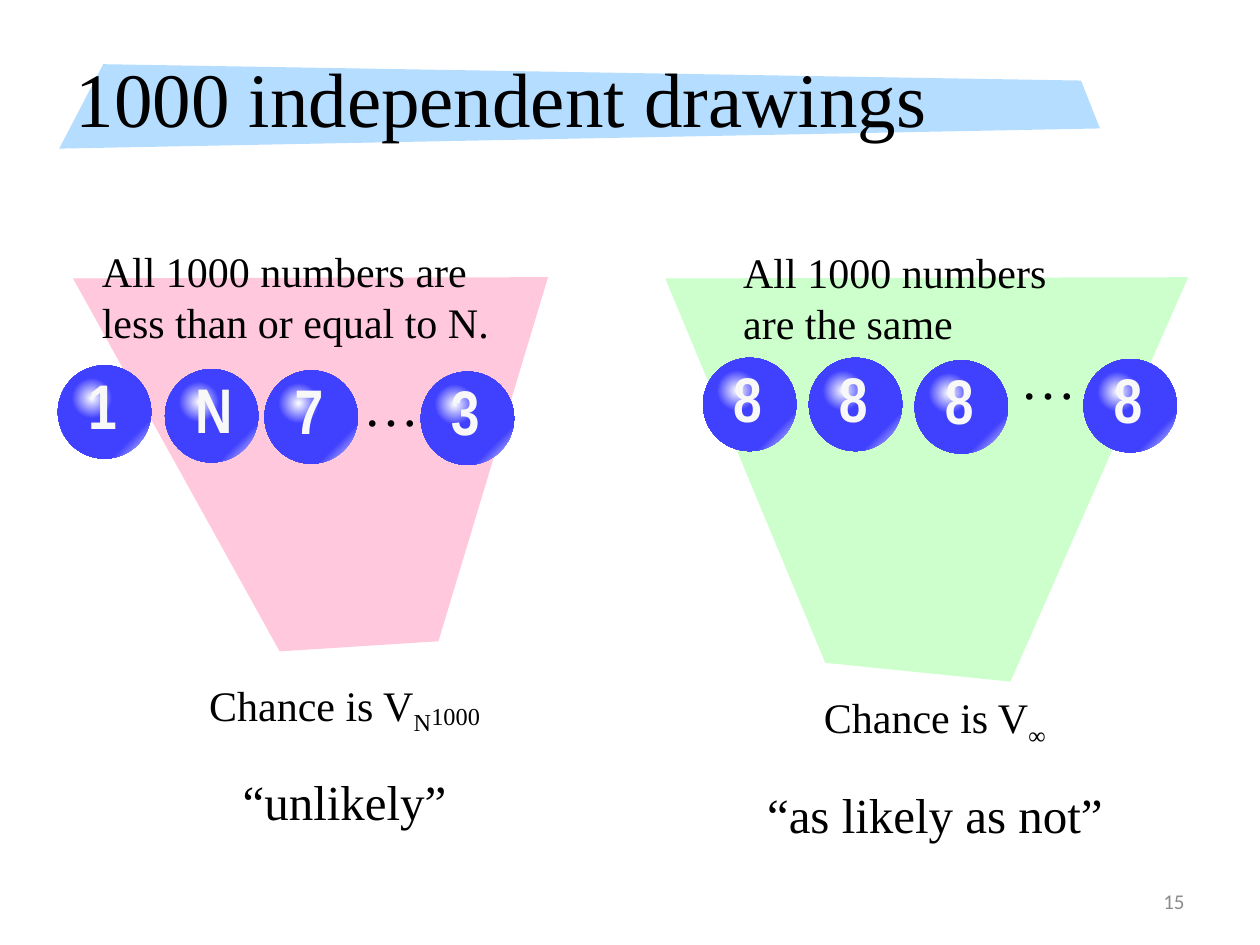
from pptx import Presentation
from pptx.dml.color import RGBColor
from pptx.enum import shapes, text
from pptx.oxml import parse_xml
from pptx.oxml.ns import nsdecls, qn
from pptx.util import Inches, Pt

SERIF = "Times New Roman"
BLUE, WHITE = "4040FF", "FFFFFF"
BODY = ((0, BLUE), (78, BLUE), (100, WHITE))
SHINE = ((0, WHITE), (64, BLUE), (100, BLUE))
SIZE = 0.74


def paint(fill, color):
    fill.solid()
    fill.fore_color.rgb = RGBColor.from_string(color)


def put(para, words, size=24, font=SERIF, color="000000", bold=False,
        align="LEFT", base=0, track=0, before=0):
    para.alignment = getattr(text.PP_ALIGN, align)
    para.space_before = Pt(before)
    run = para.add_run()
    run.text = words
    run.font.size = Pt(size)
    run.font.name = font
    run.font.bold = bold
    paint(run.font.fill, color)
    props = run.font._element
    if base:
        props.set("baseline", str(base * 1000))
    if track:
        props.set("spc", str(int(track * 100)))


def box(parent, x, y, w, h, wrap=True, anchor="TOP"):
    item = parent.add_textbox(*map(Inches, (x, y, w, h)))
    frame = item.text_frame
    frame.word_wrap = wrap
    frame.vertical_anchor = getattr(text.MSO_ANCHOR, anchor)
    return frame


def label(parent, words, place, wrap=True, anchor="TOP", **style):
    put(box(parent, *place, wrap, anchor).paragraphs[0], words, **style)


def poly(parent, points, color):
    spots = [(Inches(x), Inches(y)) for x, y in points]
    pen = parent.build_freeform(*spots[0], scale=1.0)
    pen.add_line_segments(spots[1:], close=True)
    item = pen.convert_to_shape()
    item.shadow.inherit = False
    paint(item.fill, color)
    item.line.fill.background()


def disc(parent, x, y, size, stops, focus):
    item = parent.add_shape(shapes.MSO_SHAPE.OVAL,
                            *map(Inches, (x, y, size, size)))
    item.shadow.inherit = False
    item.line.fill.background()
    item.fill.background()
    marks = "".join(
        f'<a:gs pos="{pos * 1000}"><a:srgbClr val="{color}"/></a:gs>'
        for pos, color in stops)
    left, top, right, bottom = (n * 1000 for n in focus)
    grad = parse_xml(
        f'<a:gradFill {nsdecls("a")} rotWithShape="1"><a:gsLst>{marks}</a:gsLst>'
        f'<a:path path="circle"><a:fillToRect l="{left}" t="{top}" '
        f'r="{right}" b="{bottom}"/></a:path></a:gradFill>')
    props = item._element.spPr
    props.replace(props.find(qn("a:noFill")), grad)


def ball(parent, x, y, mark):
    group = parent.add_group_shape().shapes
    disc(group, x, y, SIZE, BODY, (0, 0, 100, 100))
    disc(group, x + 0.09, y + 0.08, 0.36, SHINE, (50, 50, 50, 50))
    label(parent, mark, (x + 0.14, y - 0.04, 0.55, 0.71), size=36,
          font="Arial Narrow", color="F8F8F8", bold=True, track=1.5)


def panel(parent, points, color, place, subs, verdict):
    group = parent.add_group_shape().shapes
    poly(group, points, color)
    frame = box(group, *place, wrap=False)
    first = frame.paragraphs[0]
    put(first, "Chance is V", align="CENTER")
    for words, base in subs:
        put(first, words, align="CENTER", base=base)
    put(frame.add_paragraph(), verdict, size=28, align="CENTER", before=20)


def main():
    deck = Presentation()
    deck.slide_width, deck.slide_height = Inches(10), Inches(7.5)
    slide = deck.slides.add_slide(deck.slide_layouts[5])
    all = slide.shapes

    panel(all, [(0.58, 2.21), (4.35, 2.2), (3.48, 5.09), (2.22, 5.17)],
          "FFC8DC", (1.51, 5.34, 2.45, 1.18),
          [("N", -25), ("1000", -10)], "“unlikely”")
    panel(all, [(5.28, 2.21), (9.43, 2.2), (8.02, 5.41), (6.55, 5.26)],
          "CCFFCC", (5.97, 5.44, 2.9, 1.18),
          [("∞", -25)], "“as likely as not”")
    label(all, "15", (7.17, 6.95, 2.33, 0.4), anchor="MIDDLE", size=12,
          font="Calibri", color="8C8C8C", align="RIGHT")

    poly(all, [(0.82, 0.51), (8.58, 0.64), (8.73, 1.02), (0.47, 1.18)],
         "B4DDFF")
    title = all.title
    title.left, title.top = Inches(0.5), Inches(0.3)
    title.width, title.height = Inches(8.37), Inches(0.94)
    title.text_frame.vertical_anchor = text.MSO_ANCHOR.MIDDLE
    put(title.text_frame.paragraphs[0], "1000 independent drawings", size=44)
    all._spTree.append(title._element)

    label(all, "All 1000 numbers are less than or equal to N.",
          (0.71, 1.9, 3.37, 0.91))
    label(all, "All 1000 numbers are the same", (5.8, 1.91, 3.04, 0.91))
    for x, y in ((2.79, 2.89), (8, 2.68)):
        label(all, "…", (x, y, 0.65, 0.64), wrap=False, size=32)
    for x, y, mark in ((0.46, 2.9, "1"), (1.31, 2.93, "N"),
                       (2.1, 2.94, "7"), (3.34, 2.95, "3"),
                       (5.58, 2.84, "8"), (6.42, 2.84, "8"),
                       (7.26, 2.86, "8"), (8.6, 2.85, "8")):
        ball(all, x, y, mark)

    deck.save("out.pptx")


if __name__ == "__main__":
    main()
